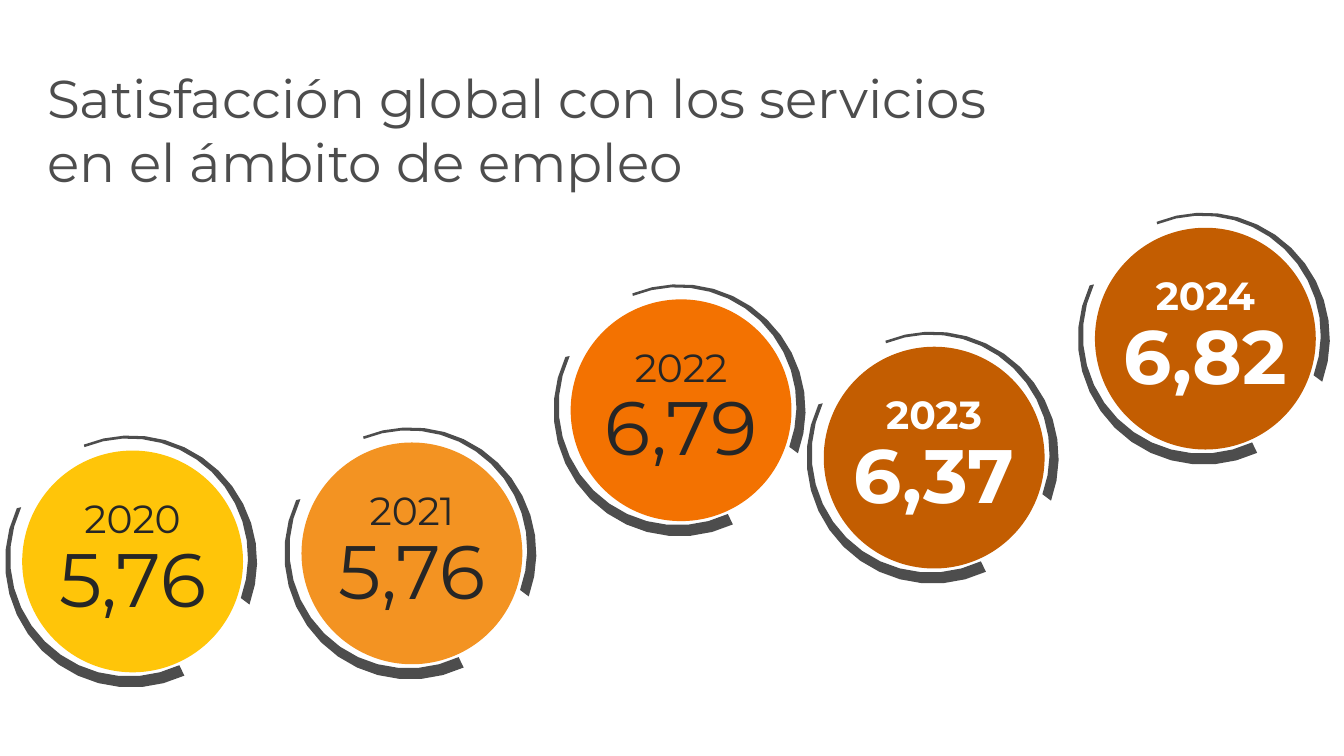
from dataclasses import dataclass
from math import cos, radians, sin

from pptx import Presentation
from pptx.dml.color import RGBColor
from pptx.enum.shapes import MSO_SHAPE
from pptx.enum.text import MSO_ANCHOR, PP_ALIGN
from pptx.util import Pt

OVAL = MSO_SHAPE.OVAL
MIDDLE = MSO_ANCHOR.MIDDLE
TOP = MSO_ANCHOR.TOP
CENTER = PP_ALIGN.CENTER
PX = 9144
STEPS = 14


@dataclass(frozen=True)
class Theme:
    font: str = "Montserrat"
    gray: str = "4D4D4D"
    dark: str = "262626"
    white: str = "FFFFFF"
    gold: str = "FFC509"
    amber: str = "F39322"
    orange: str = "F37201"
    rust: str = "C35D01"
    title: int = 38
    year: int = 28
    score: int = 54


THEME = Theme()
TITLE = "Satisfacción global con los servicios en el ámbito de empleo"
SCORES = [
    ("2020", "5,76", 5, 432, THEME.gold, THEME.dark, False),
    ("2021", "5,76", 282, 424, THEME.amber, THEME.dark, False),
    ("2022", "6,79", 549, 282, THEME.orange, THEME.dark, False),
    ("2023", "6,37", 800, 329, THEME.rust, THEME.white, True),
    ("2024", "6,82", 1069, 211, THEME.rust, THEME.white, True),
]
ARCS = [(248, 380), (65, 205)]


def px(value):
    return round(value * PX)


def paint(shape, color):
    shape.shadow.inherit = False
    shape.fill.solid()
    shape.fill.fore_color.rgb = RGBColor.from_string(color)
    shape.line.fill.background()


def style(para, size, color, bold=False):
    for run in para.runs:
        run.font.name = THEME.font
        run.font.size = Pt(size)
        run.font.bold = bold
        run.font.color.rgb = RGBColor.from_string(color)


def add_title(slide, left, top, width, height):
    box = slide.shapes.add_textbox(px(left), px(top), px(width), px(height))
    frame = box.text_frame
    frame.word_wrap = True
    frame.vertical_anchor = TOP
    frame.text = TITLE
    style(frame.paragraphs[0], THEME.title, THEME.gray)


def trace(x, y, radius, angles):
    return [
        (px(x + radius * cos(radians(a))), px(y + radius * sin(radians(a))))
        for a in angles
    ]


def add_arc(slide, left, top, start, end):
    angles = [start + (end - start) * i / STEPS for i in range(STEPS + 1)]
    outer = trace(left + 125, top + 125, 125, angles)
    inner = trace(left + 123, top + 121, 118, reversed(angles))
    pen = slide.shapes.build_freeform(*outer[0])
    pen.add_line_segments(outer[1:] + inner, close=True)
    paint(pen.convert_to_shape(), THEME.gray)


def add_score(slide, year, score, left, top, fill, color, bold):
    disc = slide.shapes.add_shape(
        OVAL, px(left + 17), px(top + 15), px(219), px(220)
    )
    paint(disc, fill)
    frame = disc.text_frame
    frame.word_wrap = False
    frame.vertical_anchor = MIDDLE
    frame.text = f"{year}\n{score}"
    for para, size in zip(frame.paragraphs, (THEME.year, THEME.score)):
        para.alignment = CENTER
        para.line_spacing = 0.9
        style(para, size, color, bold)
    for start, end in ARCS:
        add_arc(slide, left, top, start, end)


def main():
    deck = Presentation()
    deck.slide_width = px(1333)
    deck.slide_height = px(750)
    slide = deck.slides.add_slide(deck.slide_layouts[6])
    add_title(slide, 37, 60, 952, 109)
    for item in SCORES:
        add_score(slide, *item)
    deck.save("out.pptx")


if __name__ == "__main__":
    main()
